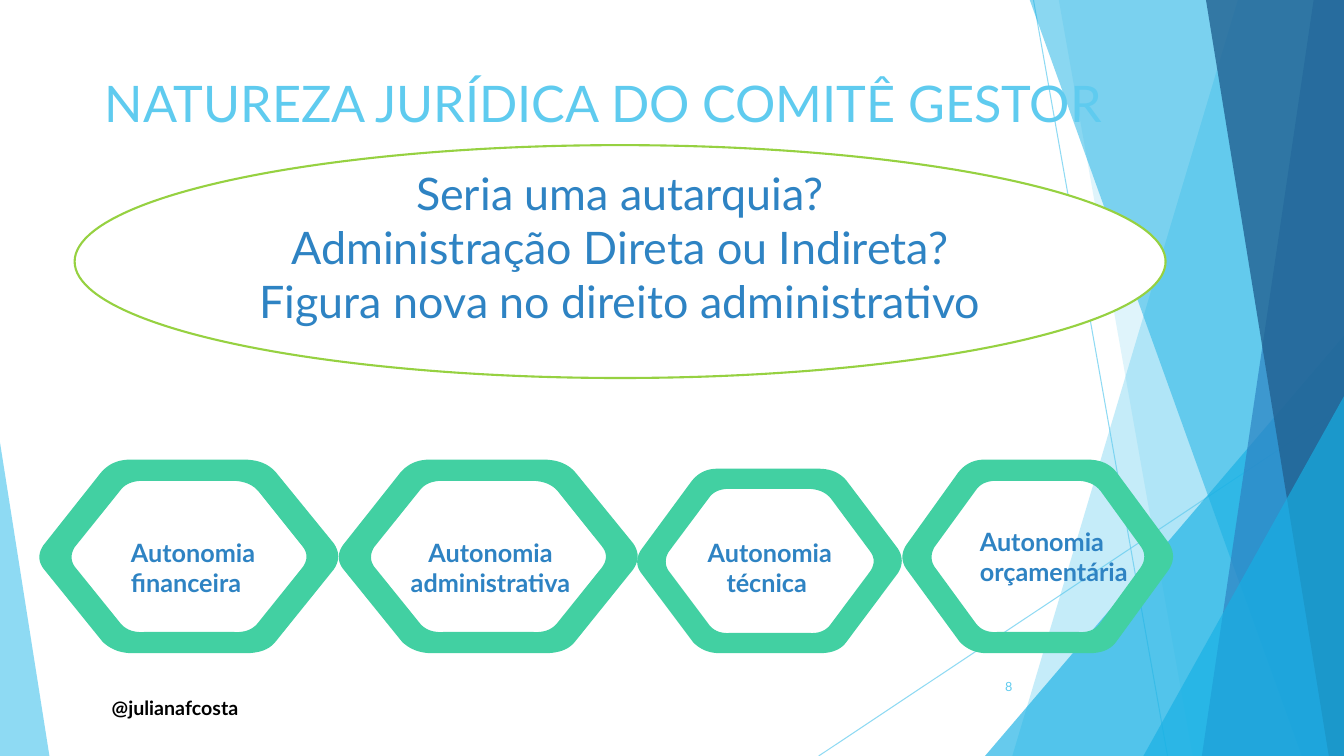
"""Build the slide on the legal nature of the managing committee."""
from lxml import etree
from pptx import Presentation
from pptx.dml.color import RGBColor
from pptx.enum.shapes import MSO_CONNECTOR, MSO_SHAPE
from pptx.enum.text import MSO_ANCHOR, MSO_AUTO_SIZE, PP_ALIGN
from pptx.oxml.ns import qn
from pptx.util import Inches, Pt

LEFT, CENTER, RIGHT = PP_ALIGN.LEFT, PP_ALIGN.CENTER, PP_ALIGN.RIGHT
TOP, MIDDLE = MSO_ANCHOR.TOP, MSO_ANCHOR.MIDDLE
TRIANGLE, OVAL = MSO_SHAPE.ISOSCELES_TRIANGLE, MSO_SHAPE.OVAL
STRAIGHT, NO_AUTOFIT = MSO_CONNECTOR.STRAIGHT, MSO_AUTO_SIZE.NONE
SKY, CYAN, BLUE, NAVY = "5FCBEF", "17B0E4", "2E83C3", "226292"
GREEN, LIME, WHITE, BLACK = "42D0A2", "96D141", "FFFFFF", "000000"


def paint(color_format, color, opacity=100):
    color_format.rgb = RGBColor.from_string(color)
    if opacity < 100:
        for node in color_format._xFill.iter(qn("a:srgbClr")):
            etree.SubElement(node, qn("a:alpha"), val=str(opacity * 1000))


def write(shape, lines, size, color, align=LEFT, anchor=TOP, bold=False):
    frame = shape.text_frame
    frame.word_wrap = True
    frame.auto_size = NO_AUTOFIT
    frame.vertical_anchor = anchor
    frame.text = "\n".join(lines)
    for para in frame.paragraphs:
        para.alignment = align
        para.font.name = "Lato"
        para.font.size = Pt(size)
        para.font.bold = bold
        paint(para.font.color, color)


deck = Presentation()
deck.slide_width, deck.slide_height = Inches(13.33), Inches(7.5)
page = deck.slides.add_slide(deck.slide_layouts[5])
shapes = page.shapes

for start_x, start_y, end_x in [(10.25, 0, 11.58), (13.33, 4.03, 8.12)]:
    ray = shapes.add_connector(
        STRAIGHT, Inches(start_x), Inches(start_y), Inches(end_x), Inches(7.5))
    ray.line.width = Pt(0.75)
    ray.line.fill.solid()
    paint(ray.line.fill.fore_color, SKY, 70)
    etree.SubElement(ray._element.spPr, qn("a:effectLst"))

facets = [
    ("band", (12.28, 10.04), SKY, 36),
    ("band", (10.5, 11.83), SKY, 20),
    ("triangle", (9.77, 3.33, 3.56, 4.17, 1), CYAN, 66),
    ("band", (10.21, 12.91), CYAN, 50),
    ("band", (13.03, 11.92), BLUE, 70),
    ("band", (11.96, 13.18), NAVY, 80),
    ("triangle", (11.34, 3.93, 1.99, 3.57, 1), CYAN, 66),
    ("triangle", (0, 4.39, 0.49, 3.11, 0), SKY, 70),
]
for kind, geometry, color, opacity in facets:
    if kind == "band":
        top_x, bottom_x = geometry
        corners = [(Inches(x), Inches(y)) for x, y in [
            (top_x, -0.01), (13.33, -0.01), (13.33, 7.5), (bottom_x, 7.5)]]
        builder = shapes.build_freeform(*corners[0])
        builder.add_line_segments(corners[1:])
        facet = builder.convert_to_shape()
    else:
        *place, apex = geometry
        facet = shapes.add_shape(TRIANGLE, *map(Inches, place))
        facet.adjustments[0] = apex
    facet.shadow.inherit = False
    facet.fill.solid()
    paint(facet.fill.fore_color, color, opacity)
    facet.line.fill.background()

title = shapes.title
title.left, title.top = Inches(0.74), Inches(0.67)
title.width, title.height = Inches(10.62), Inches(1.44)
write(title, ["NATUREZA JURÍDICA DO COMITÊ GESTOR "], 36, SKY, CENTER)
shapes._spTree.append(title._element)

number = shapes.add_textbox(Inches(9.39), Inches(6.61), Inches(0.75), Inches(0.4))
write(number, ["8"], 9, SKY, RIGHT, MIDDLE)

RING_WIDTH, RING_HEIGHT, STEPS = 2.96, 1.92, 10
outer_corners = [
    ((0.92, 1.92), (0.75, 1.92), (0.63, 1.81)),
    ((0.04, 1.08), (-0.04, 0.97), (0.04, 0.85)),
    ((0.61, 0.13), (0.72, 0), (0.9, 0)),
    ((2.03, 0), (2.24, 0), (2.35, 0.13)),
    ((2.92, 0.83), (3.01, 0.96), (2.92, 1.09)),
    ((2.34, 1.81), (2.25, 1.92), (2.05, 1.92)),
]
inner_corners = [
    ((1.93, 1.71), (2.08, 1.72), (2.16, 1.63)),
    ((2.61, 1.07), (2.69, 0.96), (2.61, 0.86)),
    ((2.17, 0.31), (2.08, 0.21), (1.91, 0.21)),
    ((1.03, 0.21), (0.87, 0.21), (0.8, 0.31)),
    ((0.35, 0.87), (0.29, 0.97), (0.35, 1.06)),
    ((0.81, 1.63), (0.89, 1.72), (1.04, 1.71)),
]
contours = []
for corners in (outer_corners, inner_corners):
    contours.append([
        tuple((1 - t) ** 2 * start + 2 * t * (1 - t) * control + t ** 2 * end
              for start, control, end in zip(*corner))
        for corner in corners
        for t in (step / STEPS for step in range(STEPS + 1))])

rings = [(0.39, 4.56, 2.96, 1.92), (3.36, 4.56, 2.96, 1.92),
         (6.32, 4.65, 2.62, 1.83), (8.95, 4.56, 2.68, 1.92)]
for left, top, width, height in rings:
    outer, inner = [
        [(Inches(left + x * width / RING_WIDTH), Inches(top + y * height / RING_HEIGHT))
         for x, y in contour]
        for contour in contours]
    builder = shapes.build_freeform(*outer[0])
    builder.add_line_segments(outer[1:])
    builder.move_to(*inner[0])
    builder.add_line_segments(inner[1:])
    ring = builder.convert_to_shape()
    ring.shadow.inherit = False
    ring.fill.solid()
    paint(ring.fill.fore_color, GREEN)
    ring.line.fill.background()

labels = [
    (1.2, 5.28, 1.65, 0.71, ["Autonomia financeira"], 18, BLUE, LEFT),
    (3.75, 5.28, 2.23, 0.71, ["Autonomia administrativa"], 18, BLUE, CENTER),
    (6.66, 5.28, 1.95, 0.71, ["Autonomia técnica "], 18, BLUE, CENTER),
    (9.62, 5.17, 1.94, 0.71, ["Autonomia", "orçamentária"], 18, BLUE, LEFT),
    (1.01, 6.86, 3.05, 0.34, ["@julianafcosta"], 14, BLACK, LEFT),
]
for left, top, width, height, lines, size, color, align in labels:
    label = shapes.add_textbox(*map(Inches, (left, top, width, height)))
    write(label, lines, size, color, align, bold=True)

question = shapes.add_shape(OVAL, Inches(0.74), Inches(1.44), Inches(10.82), Inches(2.31))
question.shadow.inherit = False
question.fill.solid()
paint(question.fill.fore_color, WHITE)
question.line.width = Pt(1.5)
paint(question.line.color, LIME)
write(question, ["Seria uma autarquia?", "Administração Direta ou Indireta?",
                 "Figura nova no direito administrativo"], 32, BLUE, CENTER, MIDDLE)
question.text_frame.margin_bottom = Inches(0.35)

deck.save("out.pptx")
